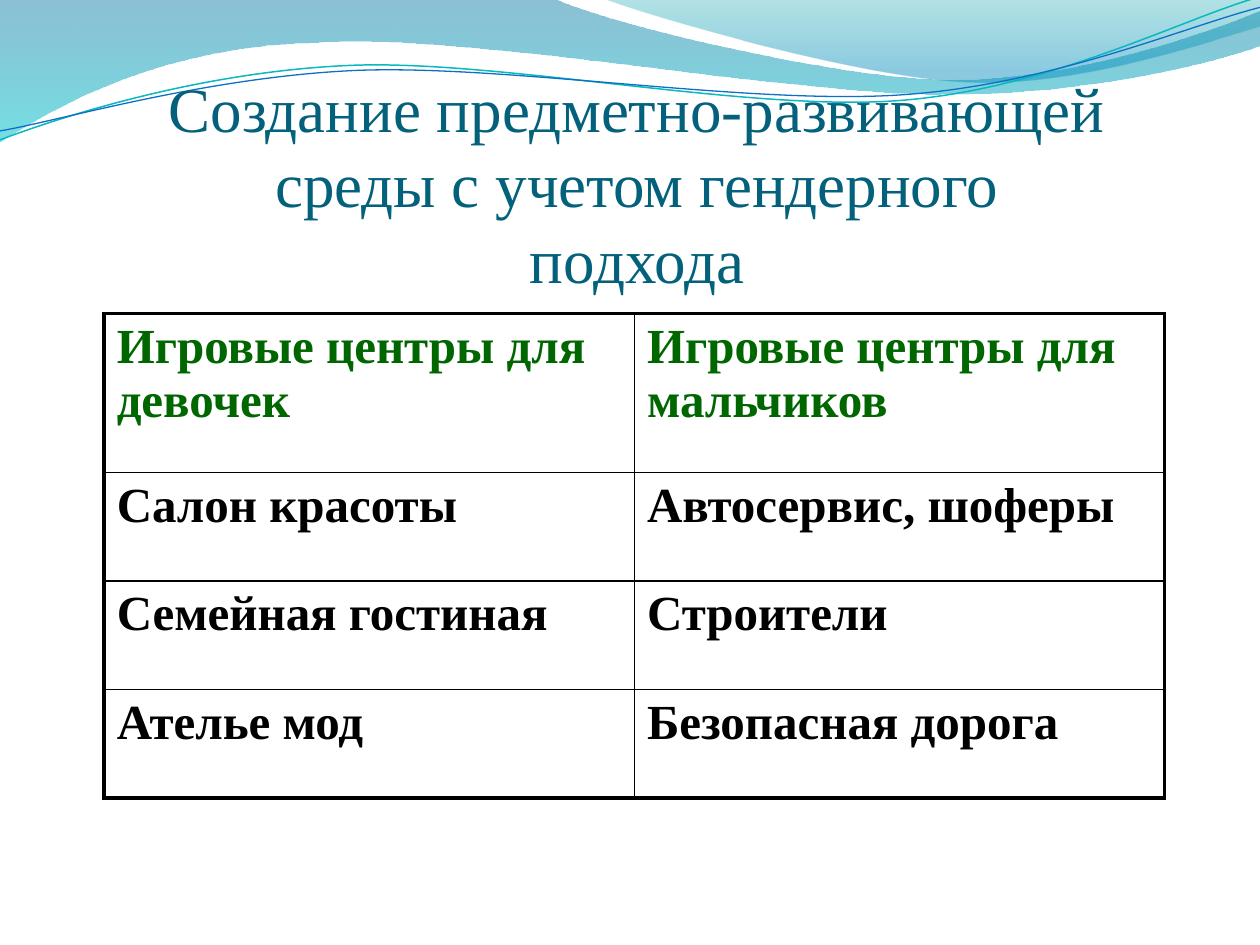
from dataclasses import dataclass
from typing import Optional

import lxml.etree
import pptx
import pptx.dml.color
import pptx.enum.text
import pptx.oxml.ns
import pptx.util

Cm = pptx.util.Cm
Pt = pptx.util.Pt
qn = pptx.oxml.ns.qn

FONT = "Times New Roman"
COLORS = {
    "title": "04617B",
    "header": "006600",
    "body": "000000",
    "border": "000000",
    "deep_blue": "0074A1",
    "aqua": "00C6CF",
    "teal": "00A1A9",
    "sky": "008BBF",
    "teal_line": "0AB8BF",
    "blue_line": "0F6FC6",
}
OUTER_BORDER = 2.25
INNER_BORDER = 1

Point = tuple[float, float]


@dataclass
class GradientStop:
    position: float
    color: str
    opacity: int


@dataclass
class Wave:
    start: Point
    segments: list[tuple[float, ...]]
    stops: Optional[list[GradientStop]] = None
    line_color: str = ""
    line_width: float = 0


WAVES = [
    Wave(
        (0, 0),
        [
            (11.18, -0.02),
            (12.09, 0.43, 16.87, 1.6, 19.25, 1.6),
            (21.67, 1.6, 24.33, 0.66, 25.4, 0.23),
            (25.43, 0.91),
            (24.97, 1.12, 22.1, 1.93, 18.95, 1.9),
            (15.8, 1.9, 9.7, 0.71, 6.53, 0.86),
            (3.28, 0.91, 1.17, 2.11, -0.03, 2.87),
        ],
        stops=[GradientStop(0, "deep_blue", 45), GradientStop(1, "aqua", 55)],
    ),
    Wave(
        (12.17, -0.03),
        [
            (12.93, 0.28, 17.32, 1.57, 19.53, 1.65),
            (21.74, 1.75, 24.41, 0.81, 25.4, 0.53),
            (25.4, 0),
        ],
        stops=[GradientStop(0, "teal", 30), GradientStop(0.8, "sky", 45)],
    ),
    Wave(
        (0, 2.82),
        [
            (1.22, 2.36, 4.01, 1.45, 7.04, 1.32),
            (10.03, 1.19, 15.06, 2.26, 18.11, 2.03),
            (21.16, 1.8, 23.83, 0.38, 25.35, -0.05),
        ],
        line_color="teal_line",
        line_width=0.85,
    ),
    Wave(
        (0, 2.64),
        [
            (1.19, 2.44, 4.17, 1.55, 7.19, 1.42),
            (10.24, 1.3, 15.16, 2.13, 18.21, 1.91),
            (21.23, 1.7, 23.9, 0.53, 25.4, 0.15),
        ],
        line_color="blue_line",
        line_width=0.75,
    ),
]

PLAY_CENTERS = [
    ("Игровые центры для девочек", "Игровые центры для мальчиков"),
    ("Салон красоты", "Автосервис, шоферы"),
    ("Семейная гостиная", "Строители"),
    ("Ателье мод", "Безопасная дорога"),
]
ROW_HEIGHTS = [3.2, 2.19, 2.19, 2.19]


def rgb(name: str) -> pptx.dml.color.RGBColor:
    return pptx.dml.color.RGBColor.from_string(COLORS[name])


def bend_segments(shape, segments: list[tuple[float, ...]]) -> None:
    lines = iter(list(shape.element.spPr.iter(qn("a:lnTo"))))
    for segment in segments:
        first = next(lines)
        if len(segment) == 2:
            continue
        curve = lxml.etree.Element(qn("a:cubicBezTo"))
        first.addprevious(curve)
        for line in (first, next(lines), next(lines)):
            curve.append(line[0])
            line.getparent().remove(line)


def draw_wave(slide, wave: Wave) -> None:
    vertices = [
        (Cm(x), Cm(y))
        for segment in wave.segments
        for x, y in zip(segment[::2], segment[1::2])
    ]
    builder = slide.shapes.build_freeform(Cm(wave.start[0]), Cm(wave.start[1]))
    builder.add_line_segments(vertices, close=wave.stops is not None)
    shape = builder.convert_to_shape()
    bend_segments(shape, wave.segments)
    shape.shadow.inherit = False
    if wave.stops is None:
        shape.fill.background()
        shape.line.color.rgb = rgb(wave.line_color)
        shape.line.width = Pt(wave.line_width)
        return
    shape.line.fill.background()
    shape.fill.gradient()
    shape.fill.gradient_angle = 270
    for target, stop in zip(shape.fill.gradient_stops, wave.stops):
        target.position = stop.position
        target.color.rgb = rgb(stop.color)
    colors = shape.element.spPr.find(qn("a:gradFill")).iter(qn("a:srgbClr"))
    for color, stop in zip(colors, wave.stops):
        lxml.etree.SubElement(color, qn("a:alpha"), val=str(stop.opacity * 1000))


def format_runs(paragraph, size: float, color: str, bold: bool) -> None:
    for run in paragraph.runs:
        run.font.name = FONT
        run.font.size = Pt(size)
        run.font.bold = bold
        run.font.color.rgb = rgb(color)


def draw_title(slide) -> None:
    title = slide.shapes.title
    title.left, title.top, title.width, title.height = Cm(3.3), Cm(1.52), Cm(19.08), Cm(4.45)
    frame = title.text_frame
    frame.text = "Создание предметно-развивающей среды с учетом гендерного подхода"
    frame.word_wrap = True
    frame.auto_size = pptx.enum.text.MSO_AUTO_SIZE.NONE
    frame.vertical_anchor = pptx.enum.text.MSO_ANCHOR.BOTTOM
    frame.margin_left = frame.margin_right = frame.margin_bottom = 0
    frame.margin_top = Cm(0.13)
    paragraph = frame.paragraphs[0]
    paragraph.alignment = pptx.enum.text.PP_ALIGN.CENTER
    format_runs(paragraph, 36, "title", False)
    title.element.getparent().append(title.element)


def set_border(cell, side: str, width: float) -> None:
    properties = cell._tc.get_or_add_tcPr()
    line = lxml.etree.SubElement(properties, qn(f"a:ln{side}"), w=str(Pt(width)))
    fill = lxml.etree.SubElement(line, qn("a:solidFill"))
    lxml.etree.SubElement(fill, qn("a:srgbClr"), val=COLORS["border"])


def draw_table(slide) -> None:
    row_count, column_count = len(PLAY_CENTERS), len(PLAY_CENTERS[0])
    table = slide.shapes.add_table(
        row_count, column_count, Cm(2.1), Cm(6.32), Cm(21.38), Cm(sum(ROW_HEIGHTS))
    ).table
    table.first_row = table.horz_banding = False
    for row, height in zip(table.rows, ROW_HEIGHTS):
        row.height = Cm(height)
    for row_index, texts in enumerate(PLAY_CENTERS):
        for column_index, text in enumerate(texts):
            cell = table.cell(row_index, column_index)
            cell.text_frame.text = text
            color = "body" if row_index else "header"
            format_runs(cell.text_frame.paragraphs[0], 28, color, True)
            outer_sides = {
                "L": column_index == 0,
                "R": column_index == column_count - 1,
                "T": row_index == 0,
                "B": row_index == row_count - 1,
            }
            for side, is_outer in outer_sides.items():
                set_border(cell, side, OUTER_BORDER if is_outer else INNER_BORDER)
            cell.fill.background()


def main() -> None:
    presentation = pptx.Presentation()
    presentation.slide_width, presentation.slide_height = Cm(25.4), Cm(19.05)
    slide = presentation.slides.add_slide(presentation.slide_layouts[5])
    for wave in WAVES:
        draw_wave(slide, wave)
    draw_title(slide)
    draw_table(slide)
    presentation.save("out.pptx")


if __name__ == "__main__":
    main()
